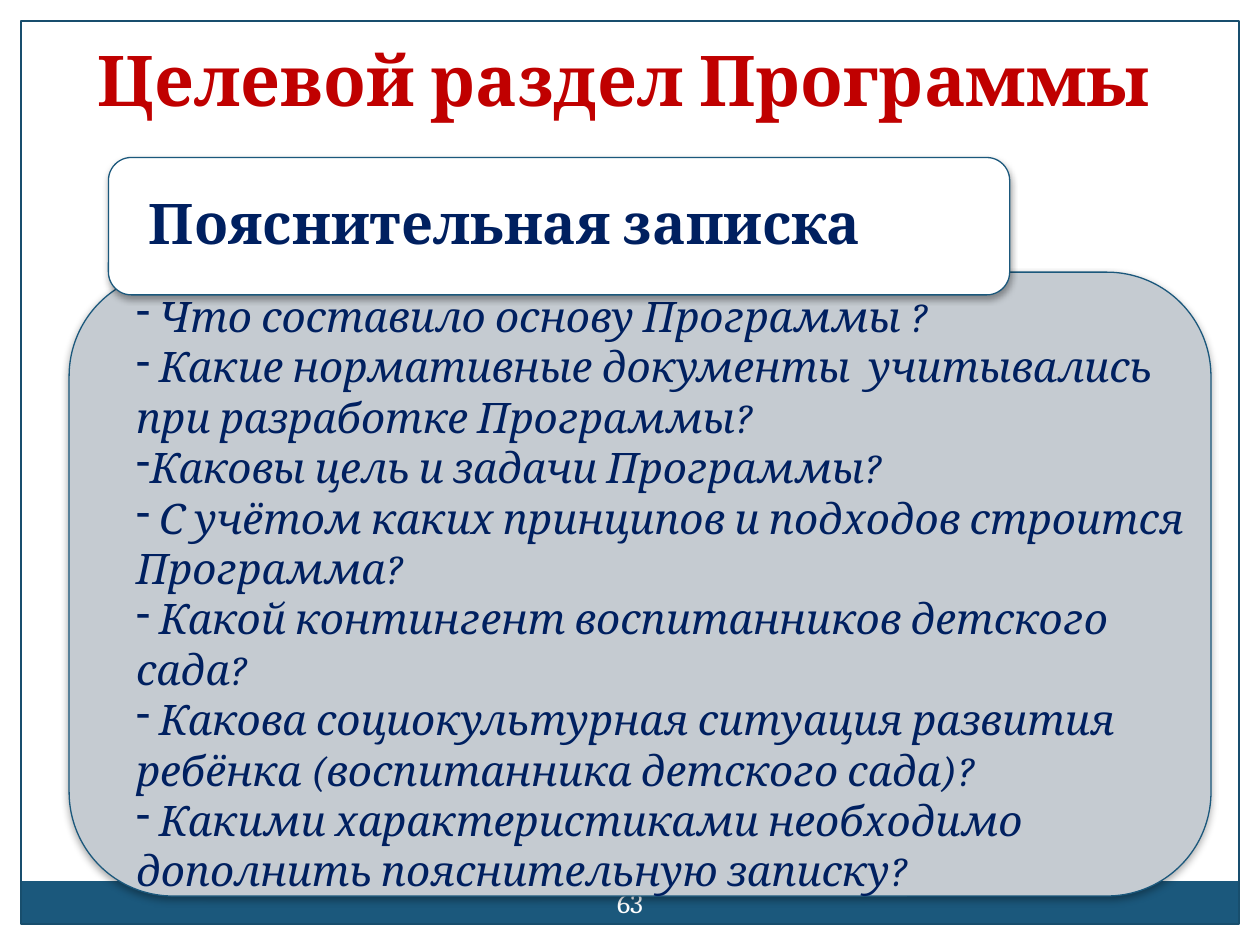
from dataclasses import dataclass

from lxml.etree import SubElement
from pptx import Presentation
from pptx.dml.color import RGBColor
from pptx.enum.shapes import MSO_SHAPE
from pptx.enum.text import MSO_ANCHOR, PP_ALIGN
from pptx.oxml.ns import qn
from pptx.util import Pt


@dataclass(frozen=True)
class Theme:
    font: str = "Cambria"
    white: str = "FFFFFF"
    band: str = "1B587C"
    frame: str = "184E6D"
    panel: str = "C5CBD1"
    text: str = "002060"
    title: str = "C00000"
    title_size: int = 40
    heading_size: int = 32
    body_size: int = 24
    number_size: int = 16
    line_width: float = 0.75


THEME = Theme()

QUESTIONS = [
    " Что составило основу Программы ?",
    " Какие нормативные документы  учитывались при разработке Программы?",
    "Каковы цель и задачи Программы?",
    " С учётом каких принципов и подходов строится Программа?",
    " Какой контингент воспитанников детского сада?",
    " Какова социокультурная ситуация развития ребёнка (воспитанника детского сада)?",
    " Какими характеристиками необходимо дополнить пояснительную записку?",
]


def add_box(slide, kind, box, fill=None, line=None, shadow=False):
    shape = slide.shapes.add_shape(kind, *map(Pt, box))
    shape.shadow.inherit = False
    if fill:
        shape.fill.solid()
        shape.fill.fore_color.rgb = RGBColor.from_string(fill)
    else:
        shape.fill.background()
    if line:
        shape.line.color.rgb = RGBColor.from_string(line)
        shape.line.width = Pt(THEME.line_width)
    else:
        shape.line.fill.background()
    if shadow:
        add_shadow(shape)
    return shape


def add_shadow(shape):
    """Soft shadow cast straight down, 35 % black."""
    effects = shape._element.spPr.find(qn("a:effectLst"))
    outer = SubElement(effects, qn("a:outerShdw"), blurRad=str(Pt(4)),
                       dist=str(Pt(2)), dir="5400000", rotWithShape="0")
    color = SubElement(outer, qn("a:srgbClr"), val="000000")
    SubElement(color, qn("a:alpha"), val="35000")


def add_text_box(slide, box):
    return slide.shapes.add_textbox(*map(Pt, box))


def write_text(shape, lines, size, color, bold=False, italic=False, bullet=None,
               align=PP_ALIGN.LEFT, anchor=MSO_ANCHOR.MIDDLE, inset=(7.2, 3.6), spacing=None):
    frame = shape.text_frame
    frame.word_wrap = True
    frame.vertical_anchor = anchor
    frame.margin_left = frame.margin_right = Pt(inset[0])
    frame.margin_top = frame.margin_bottom = Pt(inset[1])
    for index, line in enumerate(lines):
        paragraph = frame.add_paragraph() if index else frame.paragraphs[0]
        paragraph.alignment = align
        if spacing:
            paragraph.line_spacing = spacing
        if bullet:
            properties = paragraph._p.get_or_add_pPr()
            properties.set("marL", "0")
            properties.set("indent", "0")
            SubElement(properties, qn("a:buChar"), char=bullet)
        run = paragraph.add_run()
        run.text = line
        font = run.font
        font.name, font.size = THEME.font, Pt(size)
        font.bold, font.italic = bold, italic
        font.color.rgb = RGBColor.from_string(color)


def add_page_frame(slide, box, number):
    left, top, width, height = box
    band_height = 24.5
    band_top = top + height - band_height
    # Footer band, then the outline over it
    add_box(slide, MSO_SHAPE.RECTANGLE, (left, band_top, width, band_height), fill=THEME.band)
    add_box(slide, MSO_SHAPE.RECTANGLE, box, line=THEME.frame)
    # Page number, centred on the band
    number_width, number_height = 48, 34.5
    number_box = add_text_box(slide, (left + (width - number_width) / 2, band_top - 5,
                                      number_width, number_height))
    write_text(number_box, [number], THEME.number_size, THEME.white,
               align=PP_ALIGN.CENTER, inset=(3.6, 3.6))


def add_question_panel(slide, box, questions):
    left, top, width, height = box
    add_box(slide, MSO_SHAPE.ROUNDED_RECTANGLE, box, THEME.panel, THEME.band, shadow=True)
    text_box = add_text_box(slide, (left + 21, top + 10.5, width - 15, height - 10.5))
    write_text(text_box, questions, THEME.body_size, THEME.text, italic=True,
               bullet="-", anchor=MSO_ANCHOR.TOP, inset=(17.3, 0))


def add_heading_card(slide, box, heading):
    card = add_box(slide, MSO_SHAPE.ROUNDED_RECTANGLE, box, THEME.white, THEME.band, shadow=True)
    write_text(card, [heading], THEME.heading_size, THEME.text, bold=True,
               inset=(19.2, 0), spacing=0.9)


def add_title(slide, box, title):
    write_text(add_text_box(slide, box), [title], THEME.title_size, THEME.title, bold=True,
               align=PP_ALIGN.CENTER, anchor=MSO_ANCHOR.BOTTOM)


def main():
    presentation = Presentation()
    presentation.slide_width, presentation.slide_height = Pt(720), Pt(540)
    slide = presentation.slides.add_slide(presentation.slide_layouts[6])

    add_page_frame(slide, (12, 12, 696, 516), "63")
    add_question_panel(slide, (39.5, 155.5, 652.5, 356.5), QUESTIONS)
    add_heading_card(slide, (62, 90, 515, 78.5), "Пояснительная записка")
    add_title(slide, (32.4, -11.5, 648, 84.2), "Целевой раздел Программы")

    presentation.save("out.pptx")


if __name__ == "__main__":
    main()
